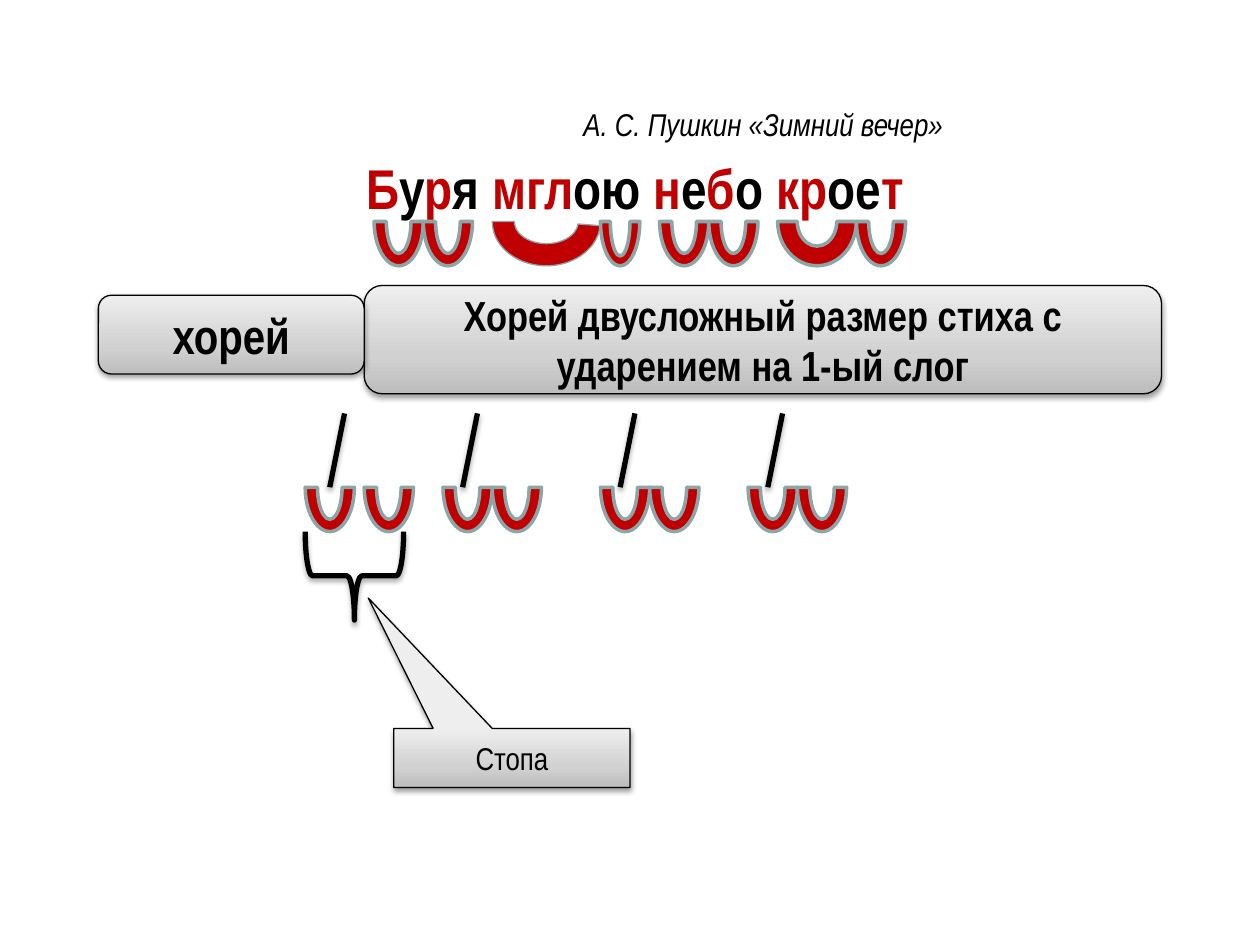
from lxml import etree
from pptx import Presentation, util as u
from pptx.dml.color import RGBColor
from pptx.enum import shapes, text
from pptx.oxml import ns

RED = RGBColor(0xC0, 0x00, 0x00)
BLACK = RGBColor(0x00, 0x00, 0x00)
ARC_EDGE = RGBColor(0x8A, 0xA6, 0xA8)
GRADIENT = [(0, RGBColor(0xBD, 0xBD, 0xBD)),
            (35, RGBColor(0xD1, 0xD1, 0xD1)),
            (100, RGBColor(0xEE, 0xEE, 0xEE))]
FONT = "Arial Narrow"
SHAPE = shapes.MSO_SHAPE
CENTER = text.PP_ALIGN.CENTER
COLS, ROWS = 128, 96

prs = Presentation()
prs.slide_width, prs.slide_height = u.Inches(10), u.Inches(7.5)


def col(n):
    return round(prs.slide_width * n / COLS)


def row(n):
    return round(prs.slide_height * n / ROWS)


def place(box):
    x, y, w, h = box
    return col(x), row(y), col(w), row(h)


def add_child(parent, tag, **attrs):
    return etree.SubElement(parent, ns.qn(tag), {k: str(v) for k, v in attrs.items()})


def add_shadow(sp, dist, alpha):
    props = sp._element.spPr
    effects = props.find(ns.qn("a:effectLst"))
    if effects is None:
        effects = add_child(props, "a:effectLst")
    outer = add_child(effects, "a:outerShdw", blurRad=u.Pt(3.1), dist=u.Pt(dist),
                      dir=90 * 60000, rotWithShape=0)
    color = add_child(outer, "a:srgbClr", val=BLACK)
    add_child(color, "a:alpha", val=alpha * 1000)


def set_line(sp, color, width):
    sp.line.color.rgb = color
    sp.line.width = u.Pt(width)


def add_run(p, words, size, color=BLACK, bold=False, italic=False):
    r = p.add_run()
    r.text = words
    r.font.name, r.font.size = FONT, u.Pt(size)
    r.font.bold, r.font.italic = bold, italic
    r.font.color.rgb = color


def text_line(s, box, runs, size, align=None, **style):
    tf = s.shapes.add_textbox(*place(box)).text_frame
    tf.word_wrap = True
    tf.auto_size = text.MSO_AUTO_SIZE.SHAPE_TO_FIT_TEXT
    p = tf.paragraphs[0]
    p.alignment = align
    for words, color in runs:
        add_run(p, words, size, color, **style)


def arc(s, box, edge=2):
    sp = s.shapes.add_shape(SHAPE.BLOCK_ARC, *place(box))
    sp.rotation = 180
    sp.shadow.inherit = False
    sp.fill.solid()
    sp.fill.fore_color.rgb = RED
    set_line(sp, ARC_EDGE, edge)
    return sp


def panel(s, box, kind, words, size, bold=True):
    sp = s.shapes.add_shape(kind, *place(box))
    sp.shadow.inherit = False
    sp.fill.gradient()
    sp.fill.gradient_angle = 90
    stops = sp._element.spPr.find(".//" + ns.qn("a:gsLst"))
    for stop in list(stops):
        stops.remove(stop)
    for pos, color in GRADIENT:
        add_child(add_child(stops, "a:gs", pos=pos * 1000), "a:srgbClr", val=color)
    set_line(sp, BLACK, 0.75)
    add_shadow(sp, 1.6, 38)
    tf = sp.text_frame
    tf.word_wrap = True
    tf.vertical_anchor = text.MSO_ANCHOR.MIDDLE
    p = tf.paragraphs[0]
    p.alignment = CENTER
    add_run(p, words, size, bold=bold)
    return sp


def verse(s, box):
    x, y, w, h = box
    parts = ["Б", "у", "р", "я", " мгл", "ою", " н", "е", "б", "о", " кр", "ое", "т"]
    runs = [(part, BLACK if i % 2 else RED) for i, part in enumerate(parts)]
    text_line(s, (x, y, w, h), runs, 32, CENTER, bold=True)
    syllables = [(26, 5), (31, 5), (38, 11), (49, 4), (55, 5), (60, 5), (67, 8), (75, 5)]
    for left, width in syllables:
        long_syllable = width == 11
        sp = arc(s, (x + left, y + 3, width, 9), 0 if long_syllable else 2)
        if long_syllable:
            sp.adjustments[0] = 110.67


def meter(s, box):
    x, y, w, h = box
    feet = [(0, 6, 2.5), (14, 5, 2), (30, 5, 2), (45, 5, 2)]
    for left, step, _ in feet:
        for i in range(2):
            arc(s, (x + left + i * step, y + 3, 5, 9))
    for left, _, stress in feet:
        foot = x + left + stress
        sp = s.shapes.add_connector(shapes.MSO_CONNECTOR.STRAIGHT,
                                    col(foot + 1.5), row(y), col(foot), row(y + h))
        set_line(sp, BLACK, 3)
        add_shadow(sp, 1.8, 35)


def foot_note(s, box):
    x, y, w, h = box
    brace = s.shapes.add_shape(SHAPE.RIGHT_BRACE, *place((x, y, 9, 10)))
    brace.rotation = 90
    brace.shadow.inherit = False
    brace.fill.background()
    set_line(brace, BLACK, 3)
    add_shadow(brace, 1.8, 35)
    callout = panel(s, (x + w - 24, y + h - 6, 24, 6), SHAPE.RECTANGULAR_CALLOUT,
                    "Стопа", 18, bold=False)
    callout.adjustments[0], callout.adjustments[1] = -0.608, -2.708


def definition(s, box):
    x, y, w, h = box
    term = 27
    panel(s, (x + term, y, w - term, h), SHAPE.ROUNDED_RECTANGLE,
          "Хорей двусложный размер стиха с ударением на 1-ый слог", 24)
    panel(s, (x, y + 1, term, 8), SHAPE.ROUNDED_RECTANGLE, "хорей", 28)


def main():
    s = prs.slides.add_slide(prs.slide_layouts[6])
    verse(s, (12, 15, 105, 8.2))
    meter(s, (31, 42, 55, 7.5))
    foot_note(s, (31.5, 53.5, 32.5, 26.5))
    definition(s, (10, 29, 108, 11))
    text_line(s, (58, 10, 56, 5.2), [("А. С. Пушкин «Зимний вечер»", BLACK)], 18, italic=True)
    prs.save("out.pptx")


if __name__ == "__main__":
    main()
